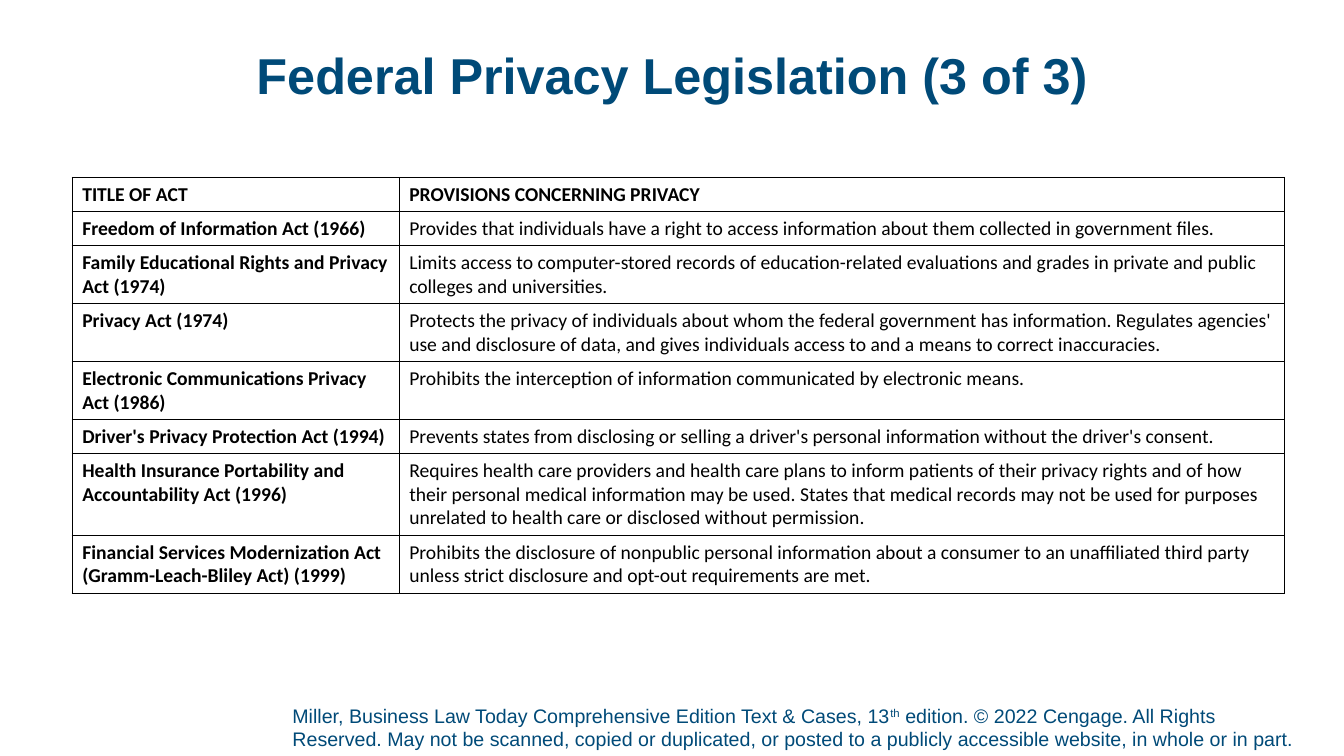
from dataclasses import dataclass

import pptx
import pptx.dml.color
import pptx.enum.text
import pptx.oxml
import pptx.oxml.ns
import pptx.util
from pptx.util import Cm, Pt


@dataclass(frozen=True)
class Theme:
    blue: str = "004A78"
    black: str = "000000"
    heading_font: str = "Arial"
    table_font: str = "Calibri"
    title_size: int = 36
    text_size: int = 14
    border_width: int = 1


THEME = Theme()

TITLE = "Federal Privacy Legislation (3 of 3)"

# Title of act, provisions, number of text lines in the row
ACTS = [
    ("TITLE OF ACT", "PROVISIONS CONCERNING PRIVACY", 1),
    ("Freedom of Information Act (1966)",
     "Provides that individuals have a right to access information about them "
     "collected in government files.", 1),
    ("Family Educational Rights and Privacy Act (1974)",
     "Limits access to computer-stored records of education-related evaluations "
     "and grades in private and public colleges and universities.", 2),
    ("Privacy Act (1974)",
     "Protects the privacy of individuals about whom the federal government has "
     "information. Regulates agencies' use and disclosure of data, and gives "
     "individuals access to and a means to correct inaccuracies.", 2),
    ("Electronic Communications Privacy Act (1986)",
     "Prohibits the interception of information communicated by electronic means.", 2),
    ("Driver's Privacy Protection Act (1994)",
     "Prevents states from disclosing or selling a driver's personal information "
     "without the driver's consent.", 1),
    ("Health Insurance Portability and Accountability Act (1996)",
     "Requires health care providers and health care plans to inform patients of "
     "their privacy rights and of how their personal medical information may be "
     "used. States that medical records may not be used for purposes unrelated to "
     "health care or disclosed without permission.", 3),
    ("Financial Services Modernization Act (Gramm-Leach-Bliley Act) (1999)",
     "Prohibits the disclosure of nonpublic personal information about a consumer "
     "to an unaffiliated third party unless strict disclosure and opt-out "
     "requirements are met.", 2),
]

# Text, whether it is superscript
COPYRIGHT = [
    ("Miller, Business Law Today Comprehensive Edition Text & Cases, 13", False),
    ("th", True),
    (" edition. © 2022 Cengage. All Rights Reserved. May not be scanned, copied or "
     "duplicated, or posted to a publicly accessible website, in whole or in part.",
     False),
]


def add_run(paragraph, text, font, size, color, bold=False):
    run = paragraph.add_run()
    run.text = text
    run.font.name = font
    run.font.size = Pt(size)
    run.font.bold = bold
    run.font.color.rgb = pptx.dml.color.RGBColor.from_string(color)
    return run


def set_frame(frame, anchor, bottom=0):
    """Make the text wrap, with no inset but the given bottom one."""
    frame.word_wrap = True
    frame.auto_size = pptx.enum.text.MSO_AUTO_SIZE.NONE
    frame.vertical_anchor = anchor
    frame.margin_left = frame.margin_right = frame.margin_top = 0
    frame.margin_bottom = bottom


def add_title(slide):
    title = slide.shapes.title
    title.left, title.top = Cm(2.34), Cm(1.02)
    title.width, title.height = Cm(29.21), Cm(1.88)
    set_frame(title.text_frame, pptx.enum.text.MSO_ANCHOR.MIDDLE)
    paragraph = title.text_frame.paragraphs[0]
    paragraph.alignment = pptx.enum.text.PP_ALIGN.CENTER
    paragraph.line_spacing = 0.9
    add_run(paragraph, TITLE, THEME.heading_font, THEME.title_size, THEME.blue, True)


def add_borders(cell):
    properties = cell._tc.get_or_add_tcPr()
    for position, side in enumerate(("lnL", "lnR", "lnT", "lnB")):
        line = pptx.oxml.parse_xml(
            f'<a:{side} {pptx.oxml.ns.nsdecls("a")} w="{Pt(THEME.border_width)}">'
            f'<a:solidFill><a:srgbClr val="{THEME.black}"/></a:solidFill></a:{side}>'
        )
        properties.insert(position, line)


def add_acts_table(slide):
    column_widths = Cm(8.24), Cm(22.31)
    row_heights = [Cm(0.26 + 0.6 * lines) for *_, lines in ACTS]
    table = slide.shapes.add_table(
        len(ACTS), len(column_widths), Cm(1.82), Cm(4.47),
        sum(column_widths), sum(row_heights),
    ).table
    table.first_row = table.horz_banding = False
    for column, width in zip(table.columns, column_widths):
        column.width = width
    for row_index, (act, provisions, _) in enumerate(ACTS):
        table.rows[row_index].height = row_heights[row_index]
        for column_index, text in enumerate((act, provisions)):
            cell = table.cell(row_index, column_index)
            cell.fill.background()
            add_borders(cell)
            add_run(cell.text_frame.paragraphs[0], text, THEME.table_font,
                    THEME.text_size, THEME.black,
                    bold=row_index == 0 or column_index == 0)


def add_copyright(slide):
    box = slide.shapes.add_textbox(Cm(7.37), Cm(17.73), Cm(25.5), Cm(1.32))
    set_frame(box.text_frame, pptx.enum.text.MSO_ANCHOR.BOTTOM, Cm(0.13))
    paragraph = box.text_frame.paragraphs[0]
    for text, superscript in COPYRIGHT:
        run = add_run(paragraph, text, THEME.heading_font, THEME.text_size, THEME.blue)
        if superscript:
            run._r.get_or_add_rPr().set("baseline", "30000")


def main():
    presentation = pptx.Presentation()
    presentation.slide_width, presentation.slide_height = Cm(33.87), Cm(19.05)
    title_only = presentation.slide_layouts.get_by_name("Title Only")
    slide = presentation.slides.add_slide(title_only)
    add_copyright(slide)
    add_title(slide)
    add_acts_table(slide)
    presentation.save("out.pptx")


if __name__ == "__main__":
    main()
